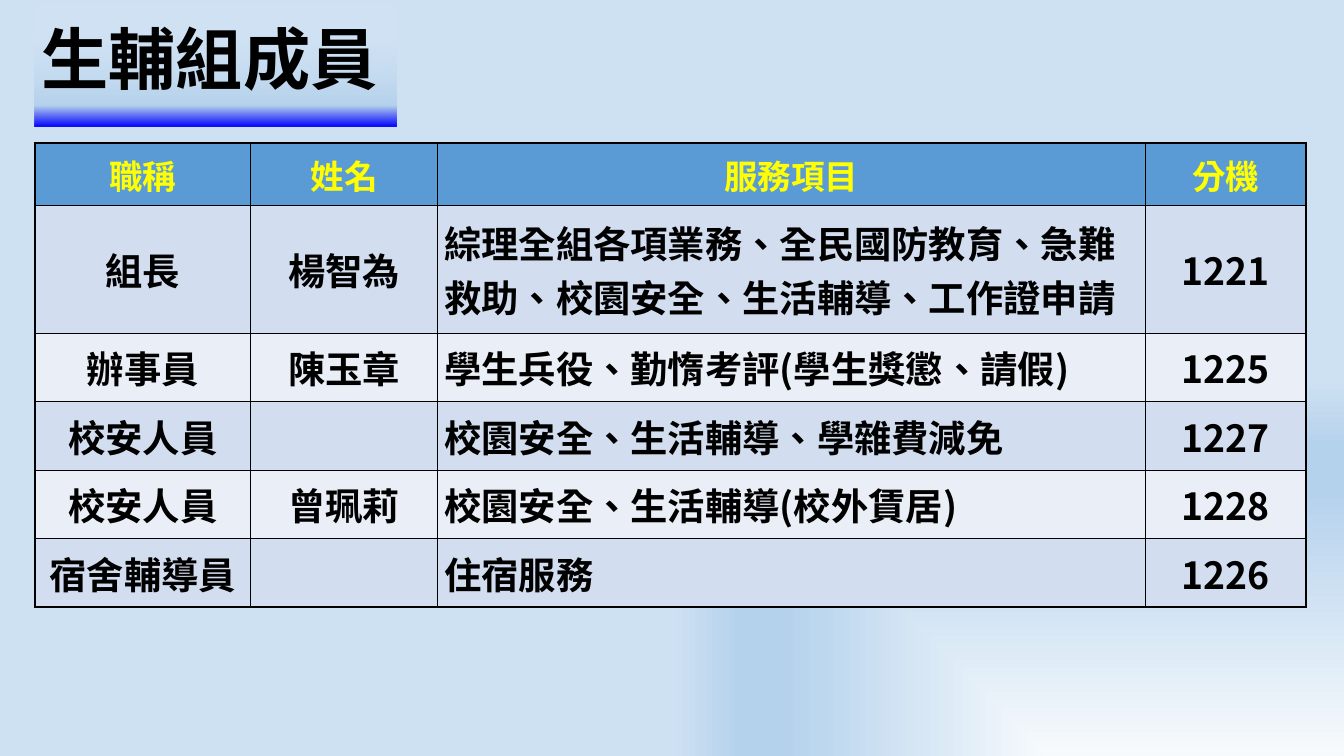
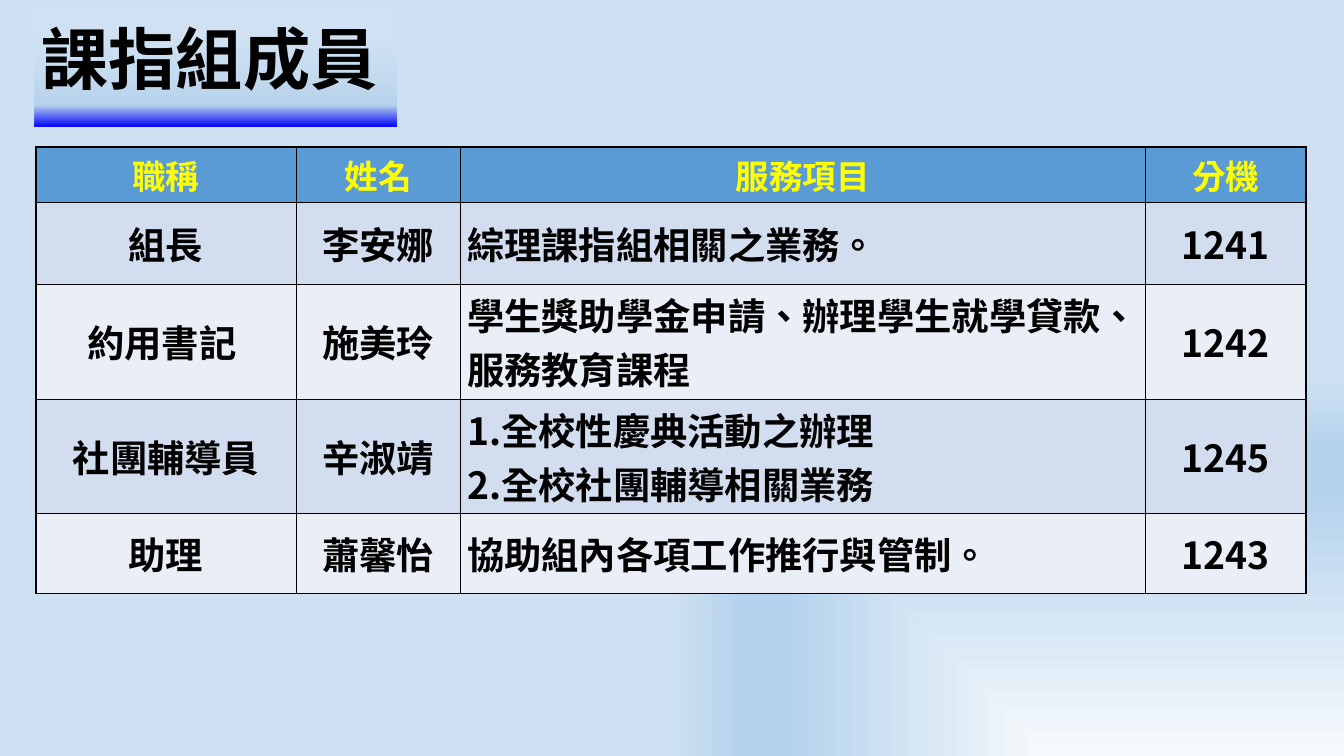
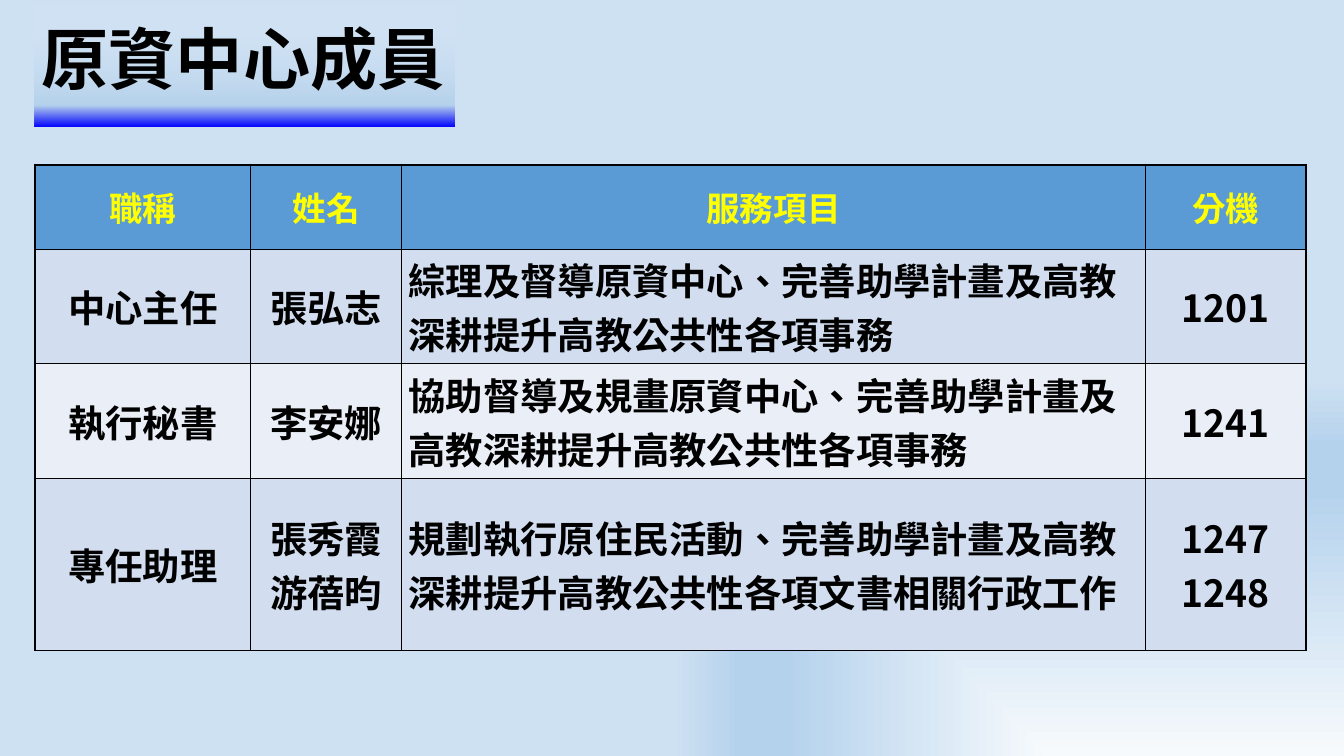
from lxml import etree
from pptx import Presentation
from pptx.dml.color import RGBColor
from pptx.enum.text import MSO_ANCHOR, PP_ALIGN
from pptx.oxml.ns import qn
from pptx.util import Inches, Pt

MIDDLE = MSO_ANCHOR.MIDDLE
CENTER = PP_ALIGN.CENTER
LEFT = PP_ALIGN.LEFT

FONT = "Noto Sans CJK SC"
TONGUE = "zh-TW"
HUES = {
    "ink": "000000",
    "head": "5B9BD5",
    "label": "FFFF00",
    "odd": "D2DEEF",
    "even": "EAEFF7",
    "blue": "0000FF",
    "sky": "B5D2EC",
    "mist": "E1EBFB",
    "snow": "F7FAFD",
    "pale": "CEE1F2",
}
THICK, THIN = 2.25, 1
EDGE = 0.52
HEADS = ["職稱", "姓名", "服務項目", "分機"]

TEAMS = [
    {
        "title": "生輔組成員", "width": 5.38,
        "left": EDGE, "top": 2.13, "base": THICK,
        "cols": [3.21, 2.78, 10.53, 2.4],
        "heights": [0.93, 1.9, 1.02, 1.02, 1.02, 1.02],
        "staff": [
            ["組長", "楊智為", "綜理全組各項業務、全民國防教育、急難救助、校園安全、生活輔導、工作證申請", "1221"],
            ["辦事員", "陳玉章", "學生兵役、勤惰考評(學生獎懲、請假)", "1225"],
            ["校安人員", "", "校園安全、生活輔導、學雜費減免", "1227"],
            ["校安人員", "曾珮莉", "校園安全、生活輔導(校外賃居)", "1228"],
            ["宿舍輔導員", "", "住宿服務", "1226"],
        ],
    },
    {
        "title": "課指組成員", "width": 5.38,
        "left": 0.53, "top": 2.19, "base": THIN,
        "cols": [3.88, 2.44, 10.19, 2.4],
        "heights": [0.82, 1.22, 1.71, 1.7, 1.19],
        "staff": [
            ["組長", "李安娜", "綜理課指組相關之業務。", "1241"],
            ["約用書記 ", "施美玲", "學生獎助學金申請、辦理學生就學貸款、服務教育課程", "1242"],
            ["社團輔導員", "辛淑靖", "1.全校性慶典活動之辦理\n2.全校社團輔導相關業務", "1245"],
            ["助理", "蕭馨怡", "協助組內各項工作推行與管制。", "1243"],
        ],
    },
    {
        "title": "原資中心成員", "width": 6.24,
        "left": EDGE, "top": 2.45, "base": THIN,
        "cols": [3.21, 2.25, 11.06, 2.4],
        "heights": [1.26, 1.7, 1.71, 2.56],
        "staff": [
            ["中心主任", "張弘志", "綜理及督導原資中心、完善助學計畫及高教深耕提升高教公共性各項事務", "1201"],
            ["執行秘書", "李安娜", "協助督導及規畫原資中心、完善助學計畫及高教深耕提升高教公共性各項事務", "1241"],
            ["專任助理", "張秀霞\v游蓓昀", "規劃執行原住民活動、完善助學計畫及高教深耕提升高教公共性各項文書相關行政工作", "1247\v1248"],
        ],
    },
]


def node(parent, tag, **attrs):
    return etree.SubElement(parent, qn(tag), {k: str(v) for k, v in attrs.items()})


def blend(root, stops):
    old = next(root.iter(qn("a:solidFill")))
    grad = etree.Element(qn("a:gradFill"), rotWithShape="1")
    marks = node(grad, "a:gsLst")
    for pos, hue, alpha in stops:
        stop = node(marks, "a:gs", pos=pos * 1000)
        color = node(stop, "a:srgbClr", val=HUES[hue])
        if alpha < 100:
            node(color, "a:alpha", val=alpha * 1000)
    old.getparent().replace(old, grad)
    return grad


def paint(master):
    master.background.fill.solid()
    grad = blend(master.element, [
        (0, "snow", 100), (70, "sky", 100), (82, "sky", 100), (100, "pale", 100)])
    node(node(grad, "a:path", path="rect"), "a:fillToRect", l=100000, t=100000)


def style(para, size, hue):
    font = para.font
    font.size = Pt(size)
    font.bold = True
    font.name = FONT
    font.color.rgb = RGBColor.from_string(HUES[hue])
    node(next(para._p.iter(qn("a:defRPr"))), "a:ea", typeface=FONT)
    for run in para.runs:
        run._r.get_or_add_rPr().set("lang", TONGUE)


def add_title(slide, text, width):
    box = slide.shapes.add_textbox(Inches(EDGE), 0, Inches(width), Inches(1.88))
    box.fill.solid()
    grad = blend(box.element, [(0, "blue", 100), (17, "sky", 100), (100, "mist", 0)])
    node(grad, "a:lin", ang=270 * 60000, scaled=0)
    frame = box.text_frame
    frame.word_wrap = True
    frame.vertical_anchor = MIDDLE
    para = frame.paragraphs[0]
    para.text = text
    para.line_spacing = 0.9
    style(para, 72, "ink")


def add_rule(cell, side, width):
    line = node(cell._tc.get_or_add_tcPr(), "a:ln" + side, w=Pt(width))
    node(node(line, "a:solidFill"), "a:srgbClr", val=HUES["ink"])


def fill_cell(cell, text, row, align, rules):
    for side, width in rules.items():
        add_rule(cell, side, width)
    hue = "head" if row == 0 else "odd" if row % 2 else "even"
    cell.fill.solid()
    cell.fill.fore_color.rgb = RGBColor.from_string(HUES[hue])
    cell.vertical_anchor = MIDDLE
    cell.text = text
    for para in cell.text_frame.paragraphs:
        para.alignment = align
        style(para, *((40, "ink") if row else (36, "label")))


def add_staff(slide, team):
    rows = [HEADS] + team["staff"]
    cols, heights = team["cols"], team["heights"]
    table = slide.shapes.add_table(
        len(rows), len(cols), Inches(team["left"]), Inches(team["top"]),
        Inches(sum(cols)), Inches(sum(heights))).table
    table.horz_banding = False
    for col, width in zip(table.columns, cols):
        col.width = Inches(width)
    for row, height in zip(table.rows, heights):
        row.height = Inches(height)
    for r, texts in enumerate(rows):
        for c, text in enumerate(texts):
            rules = {
                "L": THICK if c == 0 else THIN,
                "R": THICK if c == len(cols) - 1 else THIN,
                "T": THICK if r == 0 else THIN,
                "B": team["base"] if r == len(rows) - 1 else THIN,
            }
            align = LEFT if r and c == 2 else CENTER
            fill_cell(table.cell(r, c), text, r, align, rules)


def main():
    deck = Presentation()
    deck.slide_width = Inches(20)
    deck.slide_height = Inches(11.25)
    paint(deck.slide_master)
    for team in TEAMS:
        slide = deck.slides.add_slide(deck.slide_layouts[6])
        add_title(slide, team["title"], team["width"])
        add_staff(slide, team)
    deck.save("out.pptx")


if __name__ == "__main__":
    main()
